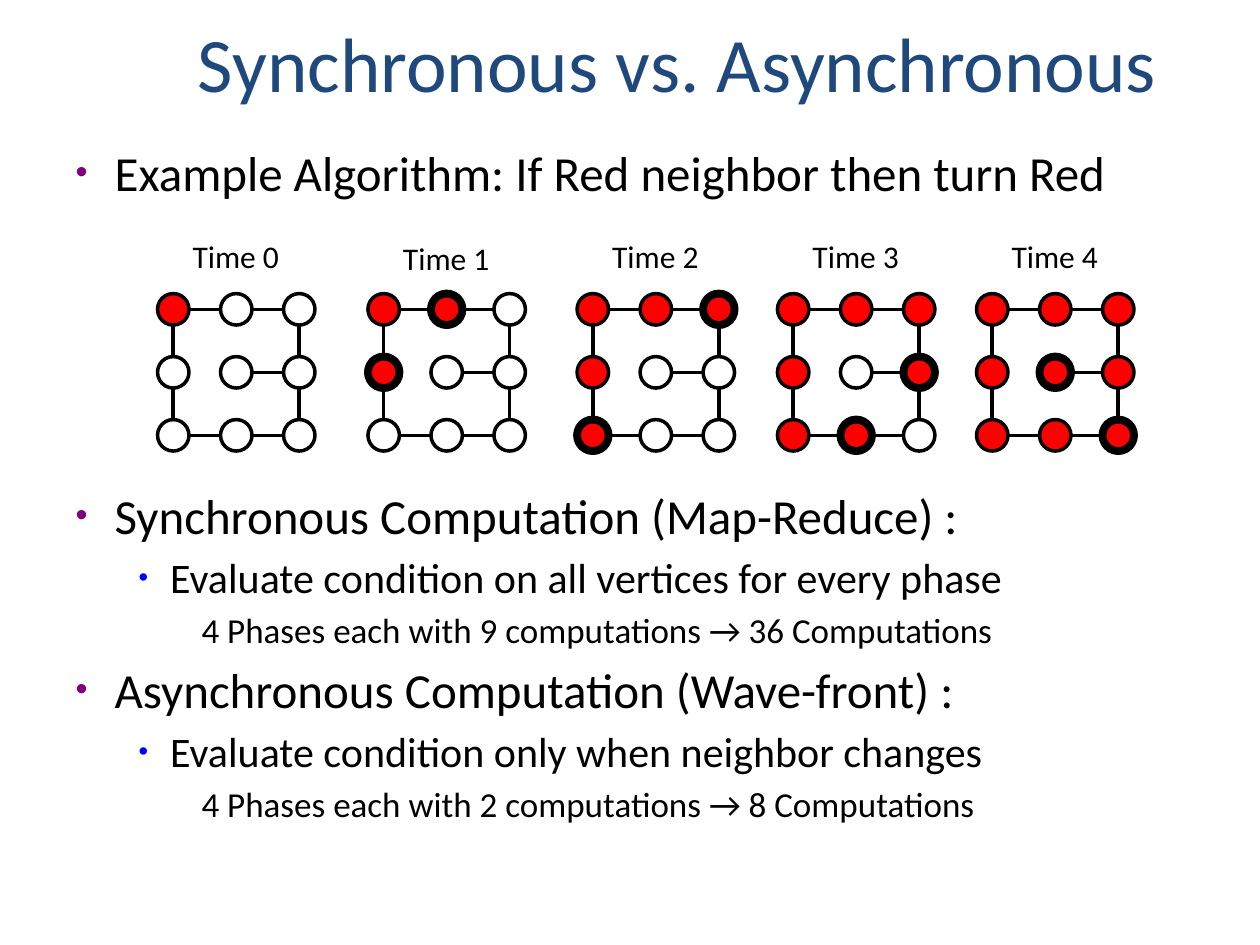
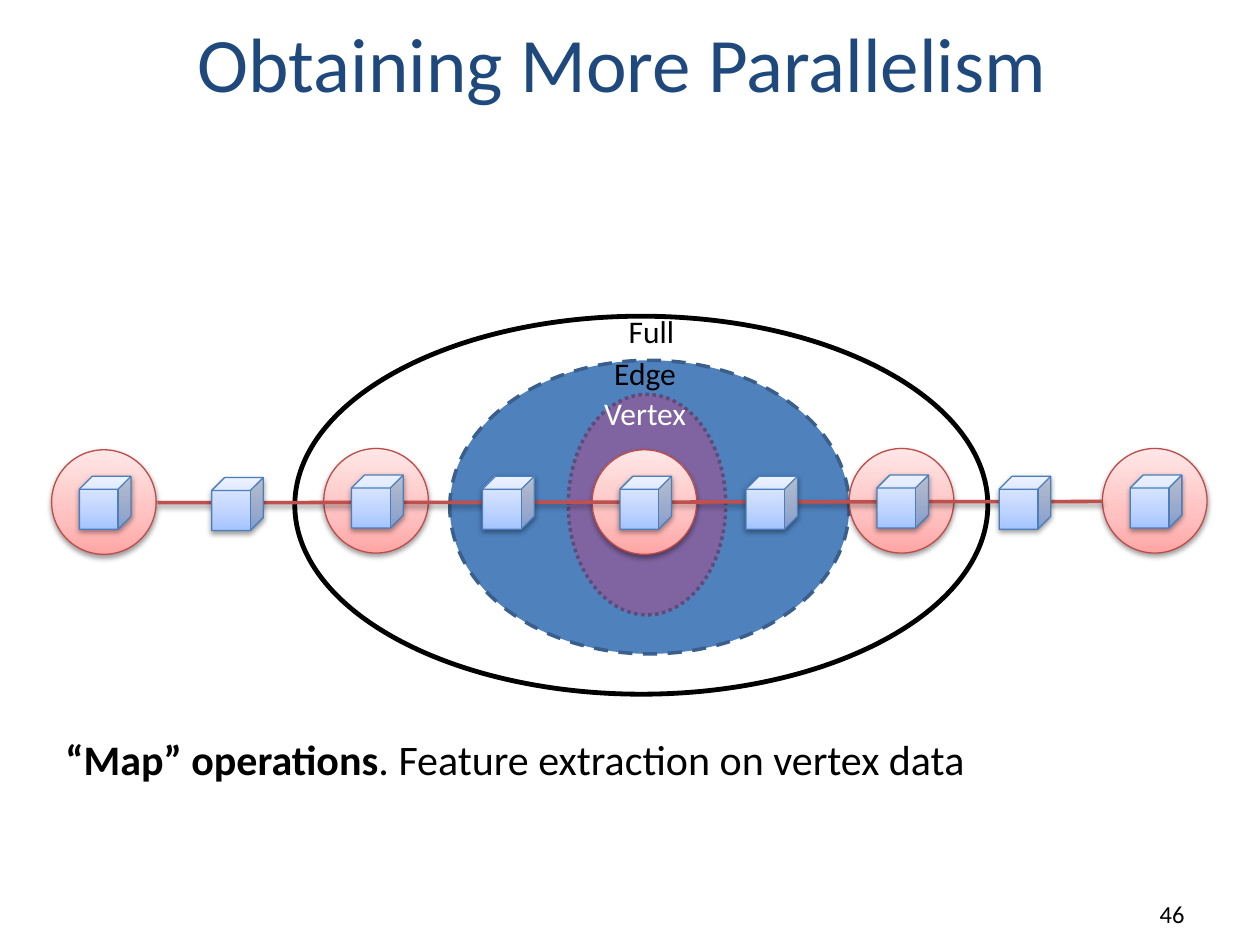
from copy import deepcopy

from lxml import etree
from pptx import Presentation
from pptx.dml.color import RGBColor
from pptx.enum.dml import MSO_LINE
from pptx.enum.shapes import MSO_CONNECTOR, MSO_SHAPE
from pptx.enum.text import MSO_ANCHOR, MSO_AUTO_SIZE, PP_ALIGN
from pptx.oxml.ns import qn
from pptx.util import Inches, Pt

ELLIPSE, CUBE = MSO_SHAPE.OVAL, MSO_SHAPE.CUBE
STRAIGHT = MSO_CONNECTOR.STRAIGHT
DASH, DOTS = MSO_LINE.DASH, MSO_LINE.ROUND_DOT
LEFT, CENTER, RIGHT = PP_ALIGN.LEFT, PP_ALIGN.CENTER, PP_ALIGN.RIGHT
TOP, BOTTOM = MSO_ANCHOR.TOP, MSO_ANCHOR.BOTTOM
NO_FIT = MSO_AUTO_SIZE.NONE

FONT = "Calibri"
BLACK = RGBColor(0x00, 0x00, 0x00)
WHITE = RGBColor(0xFF, 0xFF, 0xFF)
RED = RGBColor(0xFF, 0x00, 0x00)
TITLE_BLUE = RGBColor(0x1F, 0x49, 0x7D)
BULLET_PURPLE = RGBColor(0x80, 0x00, 0x80)
BULLET_BLUE = RGBColor(0x00, 0x00, 0xFF)
EDGE_BLUE = RGBColor(0x4F, 0x81, 0xBD)
EDGE_OUTLINE = RGBColor(0x3A, 0x5F, 0x8C)
VERTEX_PURPLE = RGBColor(0x80, 0x64, 0xA2)
VERTEX_OUTLINE = RGBColor(0x5F, 0x4A, 0x78)
CHAIN_RED = RGBColor(0xC0, 0x50, 0x4D)
NODE_OUTLINE = RGBColor(0xBF, 0x4C, 0x48)
CUBE_OUTLINE = RGBColor(0x4B, 0x7E, 0xBC)
NODE_GRADIENT = (RGBColor(0xFF, 0xA6, 0xA5), RGBColor(0xFF, 0xC0, 0xBF),
                 RGBColor(0xFF, 0xE7, 0xE7))
CUBE_GRADIENT = (RGBColor(0xA4, 0xC4, 0xFF), RGBColor(0xBF, 0xD4, 0xFF),
                 RGBColor(0xE6, 0xEE, 0xFF))
GRADIENT_STOPS = (0, 0.35, 1)

# Per list level: size, indent, hanging, bullet colour, bullet %, space before
LIST_LEVELS = (
    (28, 0.31, -0.31, BULLET_PURPLE, 70, 5.1),
    (24, 0.75, -0.25, BULLET_BLUE, 65, 4.3),
    (20, 1, 0, None, None, 3.6),
)


class Deck:
    """Holds the style, the current slide and the shapes being drawn on."""

    def __init__(self):
        self.prs = Presentation()
        self.prs.slide_width = Inches(10)
        self.prs.slide_height = Inches(7.5)

    def new_slide(self, layout, title):
        self.slide = self.prs.slides.add_slide(self.prs.slide_layouts[layout])
        self.canvas = self.slide.shapes
        heading = self.slide.shapes.title
        self.place(heading, 1.47, 0.08, 8.2, 0.83)
        frame = heading.text_frame
        frame.auto_size = NO_FIT
        frame.vertical_anchor = BOTTOM
        frame.paragraphs[0].alignment = LEFT
        self.run(frame.paragraphs[0], title, 44, TITLE_BLUE)

    def start_group(self):
        self.canvas = self.slide.shapes.add_group_shape().shapes

    def end_group(self):
        self.canvas = self.slide.shapes

    @staticmethod
    def place(shape, left, top, width, height):
        shape.left, shape.top = Inches(left), Inches(top)
        shape.width, shape.height = Inches(width), Inches(height)

    @staticmethod
    def run(paragraph, text, size, color=BLACK, bold=False):
        run = paragraph.add_run()
        run.text = text
        run.font.name = FONT
        run.font.size = Pt(size)
        run.font.bold = bold
        run.font.color.rgb = color

    def bullet_list(self, items, left, top, width, height):
        """Fill the body; items are (level, text, extra space before in points)."""
        body = self.slide.placeholders[1]
        self.place(body, left, top, width, height)
        frame = body.text_frame
        frame.auto_size = NO_FIT
        for i, (level, text, gap) in enumerate(items):
            paragraph = frame.paragraphs[0] if i == 0 else frame.add_paragraph()
            size, indent, hanging, color, percent, before = LIST_LEVELS[level]
            paragraph.level = level
            props = paragraph._p.get_or_add_pPr()
            props.set("marL", str(Inches(indent)))
            props.set("indent", str(Inches(hanging)))
            if color is None:
                etree.SubElement(props, qn("a:buNone"))
            else:
                tint = etree.SubElement(props, qn("a:buClr"))
                etree.SubElement(tint, qn("a:srgbClr"), val=str(color))
                etree.SubElement(props, qn("a:buSzPct"), val=str(percent * 1000))
                etree.SubElement(props, qn("a:buFont"), typeface="Arial")
                etree.SubElement(props, qn("a:buChar"), char="•")
            paragraph.space_before = Pt(before + gap if i else 0)
            self.run(paragraph, text, size)

    def text(self, runs, left, top, width, height, size=18, color=BLACK,
             align=LEFT, anchor=TOP, wrap=False):
        """Add a text box; runs are (text, bold)."""
        box = self.canvas.add_textbox(Inches(left), Inches(top),
                                      Inches(width), Inches(height))
        frame = box.text_frame
        frame.word_wrap = wrap
        frame.vertical_anchor = anchor
        frame.paragraphs[0].alignment = align
        for words, bold in runs:
            self.run(frame.paragraphs[0], words, size, color, bold)

    @staticmethod
    def cast_shadow(effects):
        shadow = etree.SubElement(effects, qn("a:outerShdw"), blurRad=str(Pt(3.1)),
                                  dist=str(Pt(1.6)), dir="5400000", rotWithShape="0")
        tint = etree.SubElement(shadow, qn("a:srgbClr"), val=str(BLACK))
        etree.SubElement(tint, qn("a:alpha"), val="38000")

    def shape(self, kind, left, top, width, height, fill, outline, weight, dash=None):
        """Add a preset shape; a tuple of three colours gives a shaded, raised one."""
        shape = self.canvas.add_shape(kind, Inches(left), Inches(top),
                                      Inches(width), Inches(height))
        shape.line.color.rgb = outline
        shape.line.width = Pt(weight)
        if dash is not None:
            shape.line.dash_style = dash
        shape.shadow.inherit = False
        if isinstance(fill, tuple) and not isinstance(fill, RGBColor):
            shape.fill.gradient()
            shape.fill.gradient_angle = 90
            props = shape._element.spPr
            stops = props.find(".//" + qn("a:gsLst"))
            stops.append(deepcopy(stops[0]))
            for stop, position, color in zip(shape.fill.gradient_stops,
                                             GRADIENT_STOPS, fill):
                stop.position = position
                stop.color.rgb = color
            self.cast_shadow(props.find(qn("a:effectLst")))
        else:
            shape.fill.solid()
            shape.fill.fore_color.rgb = fill

    def line(self, x1, y1, x2, y2, color=BLACK, shadow=False):
        link = self.canvas.add_connector(STRAIGHT, Inches(x1), Inches(y1),
                                         Inches(x2), Inches(y2))
        link.line.color.rgb = color
        link.line.width = Pt(2)
        effects = etree.SubElement(link._element.spPr, qn("a:effectLst"))
        if shadow:
            self.cast_shadow(effects)


# Time step at which each vertex of the 3 x 3 graph turns red
TURNS_RED = ((0, 1, 2), (1, 4, 3), (2, 3, 4))
GRAPH_LEFTS = (1.25, 2.92, 4.58, 6.17, 7.75)
GRAPH_TOP, STEP, VERTEX = 2.33, 0.5, 0.25


def draw_graph(deck, time, left):
    """Draw the graph at one time step, with vertices that just changed in bold."""
    deck.start_group()
    radius = VERTEX / 2
    right = left + 2 * STEP
    for row, start in enumerate((left, left + STEP, left)):
        y = GRAPH_TOP + row * STEP + radius
        deck.line(start + VERTEX, y, right, y)
    for x in (left + radius, right + radius):
        deck.line(x, GRAPH_TOP + 2 * STEP, x, GRAPH_TOP + VERTEX)
    for row, turns in enumerate(TURNS_RED):
        for column, turn in enumerate(turns):
            just_changed = time == turn and time > 0
            deck.shape(ELLIPSE, left + column * STEP, GRAPH_TOP + row * STEP,
                       VERTEX, VERTEX, RED if turn <= time else WHITE, BLACK,
                       4.5 if just_changed else 2)
    label_top = 1.85 if time == 1 else 1.83
    deck.text([(f"Time {time}", False)], left + 0.18, label_top, 0.9, 0.4)
    deck.end_group()


def build_synchronous(deck):
    deck.new_slide(1, "Synchronous vs. Asynchronous")
    graph_gap = 157.3
    deck.bullet_list([
        (0, "Example Algorithm: If Red neighbor then turn Red", 0),
        (0, "Synchronous Computation (Map-Reduce) :", graph_gap),
        (1, "Evaluate condition on all vertices for every phase", 0),
        (2, "4 Phases each with 9 computations → 36 Computations", 0),
        (0, "Asynchronous Computation (Wave-front) :", 0),
        (1, "Evaluate condition only when neighbor changes", 0),
        (2, "4 Phases each with 2 computations → 8 Computations", 0),
    ], 0.5, 1.08, 9.08, 5.67)
    for time, left in enumerate(GRAPH_LEFTS):
        draw_graph(deck, time, left)


def build_parallelism(deck):
    deck.new_slide(5, "Obtaining More Parallelism")
    deck.shape(ELLIPSE, 2.34, 2.51, 5.5, 3, WHITE, BLACK, 2.75)
    deck.text([("Full", False)], 3.17, 2.43, 4, 0.4, align=CENTER)
    deck.shape(ELLIPSE, 3.57, 2.86, 3.17, 2.33, EDGE_BLUE, EDGE_OUTLINE, 2, DASH)
    deck.text([("Edge", False)], 3.92, 2.76, 2.4, 0.4, align=CENTER)
    deck.shape(ELLIPSE, 4.51, 3.13, 1.25, 1.75, VERTEX_PURPLE, VERTEX_OUTLINE, 2, DOTS)
    deck.text([("Vertex", False)], 4.33, 3.08, 1.58, 0.4, color=WHITE, align=CENTER)

    deck.start_group()
    vertices = ((0.41, 3.57), (2.57, 3.56), (4.7, 3.57), (6.74, 3.56), (8.75, 3.56))
    vertex_data = [(left + 0.22, top + 0.21) for left, top in vertices]
    edge_data = [(1.68, 3.79), (3.83, 3.78), (5.92, 3.78), (7.93, 3.78)]
    for left, top in vertices:
        deck.shape(ELLIPSE, left, top, 0.83, 0.83, NODE_GRADIENT, NODE_OUTLINE, 0.75)
    deck.line(1.25, 3.99, 8.75, 3.98, CHAIN_RED, shadow=True)
    for left, top in vertex_data + edge_data:
        deck.shape(CUBE, left, top, 0.41, 0.42, CUBE_GRADIENT, CUBE_OUTLINE, 0.75)
    deck.end_group()

    deck.text([("“Map” operations", True), (". Feature extraction on vertex data", False)],
              0.42, 5.77, 8.08, 0.5, size=24, wrap=True)
    deck.text([("46", False)], 7.42, 6.92, 2.08, 0.5, size=14,
              align=RIGHT, anchor=BOTTOM, wrap=True)


def main():
    deck = Deck()
    build_synchronous(deck)
    build_parallelism(deck)
    deck.prs.save("out.pptx")


if __name__ == "__main__":
    main()
